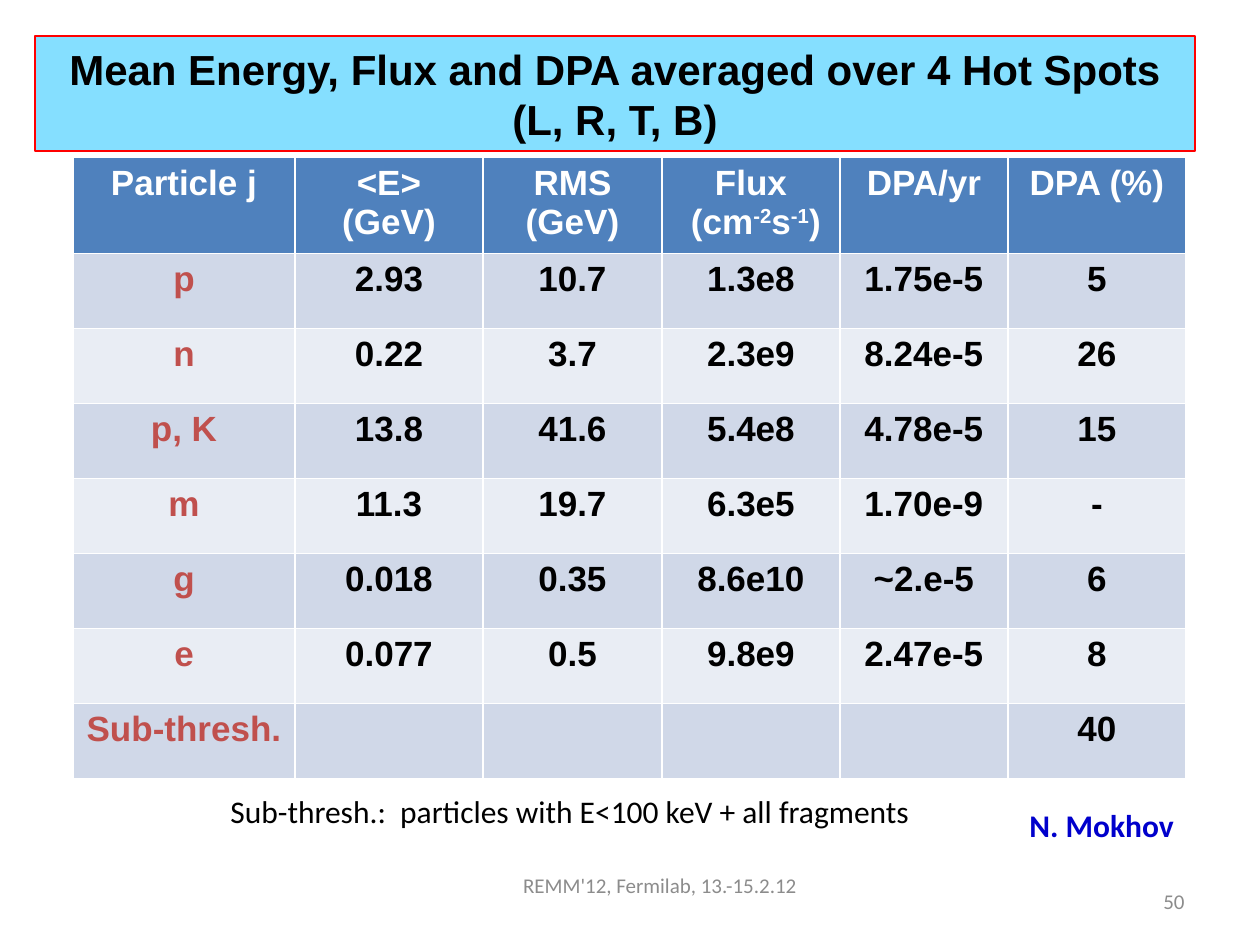
from pptx import Presentation
from pptx import util as u
from pptx.dml import color as dml
from pptx.enum import shapes, text

SCALE = u.Inches(10) / 1260
ALIGN = {"left": text.PP_ALIGN.LEFT, "center": text.PP_ALIGN.CENTER, "right": text.PP_ALIGN.RIGHT}
COLUMN_WIDTHS = [222, 188, 179, 178, 168, 178]
HEADER_HEIGHT, ROW_HEIGHT = 88, 75
ROWS = [
    ["Particle j", "<E> (GeV)", "RMS (GeV)", "Flux\n (cm^-2^s^-1^)", "DPA/yr", "DPA (%)"],
    ["p", "2.93", "10.7", "1.3e8", "1.75e-5", "5"],
    ["n", "0.22", "3.7", "2.3e9", "8.24e-5", "26"],
    ["p, K", "13.8", "41.6", "5.4e8", "4.78e-5", "15"],
    ["m", "11.3", "19.7", "6.3e5", "1.70e-9", "-"],
    ["g", "0.018", "0.35", "8.6e10", "~2.e-5", "6"],
    ["e", "0.077", "0.5", "9.8e9", "2.47e-5", "8"],
    ["Sub-thresh.", "", "", "", "", "40"],
]


def px(*lengths):
    """Return the pixel lengths as EMU."""
    return [round(length * SCALE) for length in lengths]


def paint(target, color):
    """Give a fill a solid hex colour."""
    target.solid()
    target.fore_color.rgb = dml.RGBColor.from_string(color)


def write(frame, content, size=18, font="Calibri", color="000000", bold=False, align="left"):
    """Write paragraphs split at newlines, with superscripts between carets."""
    for index, line in enumerate(content.split("\n")):
        paragraph = frame.add_paragraph() if index else frame.paragraphs[0]
        paragraph.alignment = ALIGN[align]
        for position, part in enumerate(line.split("^")):
            run = paragraph.add_run()
            run.text = part
            run.font.size, run.font.name, run.font.bold = u.Pt(size), font, bold
            paint(run.font.fill, color)
            if position % 2:
                run.font._element.set("baseline", "30000")


def add_label(slide, box, content, wrap=True, anchor="TOP", **style):
    """Add a text box."""
    frame = slide.shapes.add_textbox(*px(*box)).text_frame
    frame.word_wrap = wrap
    frame.vertical_anchor = text.MSO_ANCHOR[anchor]
    write(frame, content, **style)


def add_title(slide, box, content):
    """Add the framed title banner."""
    shape = slide.shapes.add_shape(shapes.MSO_SHAPE.RECTANGLE, *px(*box))
    shape.shadow.inherit = False
    paint(shape.fill, "85DFFF")
    paint(shape.line.fill, "FF0000")
    shape.line.width = u.Pt(0.75)
    shape.text_frame.word_wrap = True
    write(shape.text_frame, content, size=24, font="Arial", bold=True, align="center")


def add_particle_table(slide, left, top):
    """Add the banded table of particle results."""
    heights = [HEADER_HEIGHT] + [ROW_HEIGHT] * (len(ROWS) - 1)
    box = px(left, top, sum(COLUMN_WIDTHS), sum(heights))
    table = slide.shapes.add_table(len(ROWS), len(COLUMN_WIDTHS), *box).table
    for column, width in zip(table.columns, px(*COLUMN_WIDTHS)):
        column.width = width
    for row, height in zip(table.rows, px(*heights)):
        row.height = height
    for i, values in enumerate(ROWS):
        for j, value in enumerate(values):
            cell = table.cell(i, j)
            header = i == 0
            paint(cell.fill, "4F81BD" if header else ("E9EDF4", "D0D8E8")[i % 2])
            color = "FFFFFF" if header else "000000" if j else "C0504D"
            if value:
                write(cell.text_frame, value, size=20, font="Arial", color=color, bold=True, align="center")


def add_footer(slide):
    """Add the event line and the slide number."""
    style = dict(anchor="MIDDLE", size=12, color="8C8C8C")
    add_label(slide, (432, 860, 456, 50), "REMM'12, Fermilab, 13.-15.2.12", align="center", **style)
    add_label(slide, (903, 876, 294, 50), "50", align="right", **style)


def main():
    """Build the slide and save it."""
    presentation = Presentation()
    presentation.slide_width, presentation.slide_height = px(1260, 945)
    slide = presentation.slides.add_slide(presentation.slide_layouts[6])
    add_footer(slide)
    add_particle_table(slide, 73, 157)
    add_label(slide, (218, 786, 721, 50), "Sub-thresh.:  particles with E<100 keV + all fragments", wrap=False)
    add_title(slide, (35, 36, 1160, 115), "Mean Energy, Flux and DPA averaged over 4 Hot Spots (L, R, T, B)")
    add_label(slide, (1017, 800, 171, 50), "N. Mokhov", wrap=False, color="0000CC", bold=True)
    presentation.save("out.pptx")


if __name__ == "__main__":
    main()
